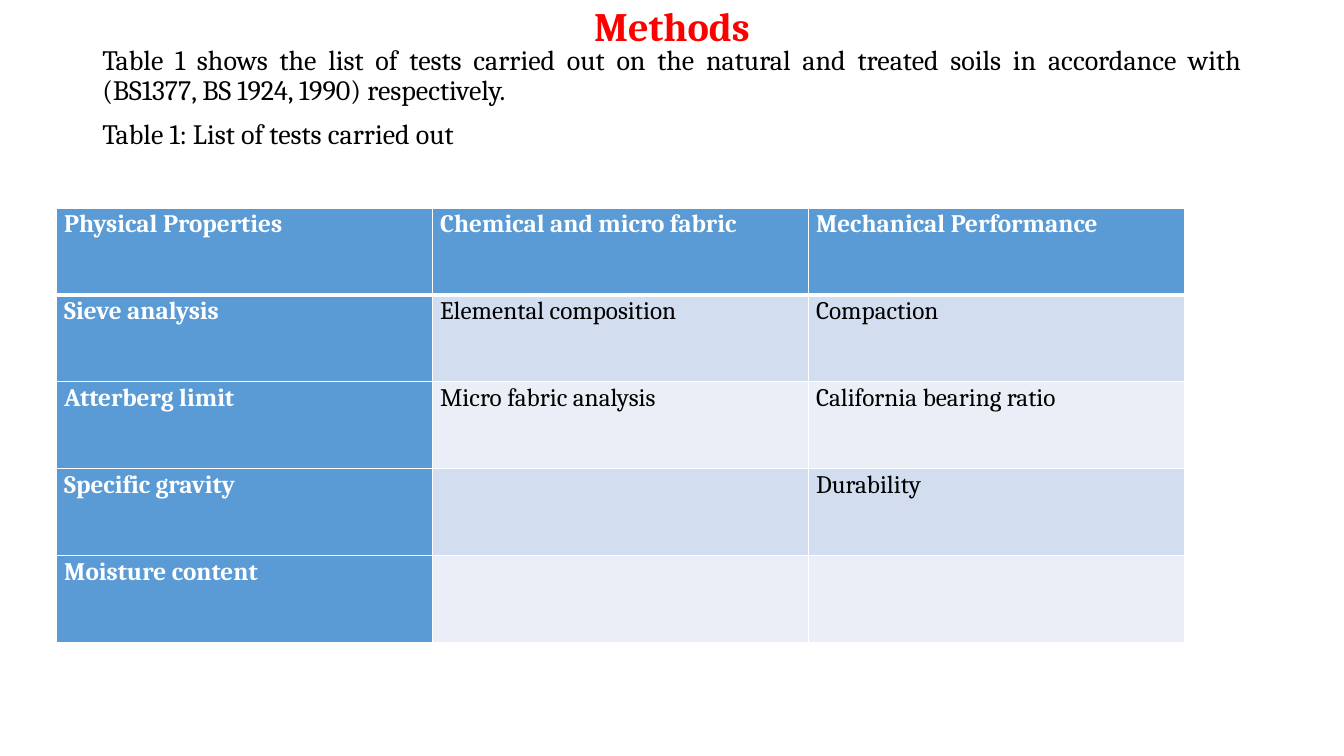
from lxml.etree import SubElement
from pptx import Presentation
from pptx.dml.color import RGBColor
from pptx.enum.text import MSO_ANCHOR as Anchor, PP_ALIGN as Align
from pptx.oxml.ns import qn
from pptx.util import Pt

FONT = "Cambria"
RED = RGBColor(0xFF, 0x00, 0x00)
BLACK = RGBColor(0x00, 0x00, 0x00)
WHITE = RGBColor(0xFF, 0xFF, 0xFF)
BLUE = RGBColor(0x5B, 0x9B, 0xD5)
BANDS = [RGBColor(0xD2, 0xDE, 0xEF), RGBColor(0xEA, 0xEF, 0xF7)]

INTRO = [
    "Table 1 shows the list of tests carried out on the natural and treated soils "
    "in accordance with (BS1377, BS 1924, 1990) respectively.",
    "Table 1: List of tests carried out",
]
TESTS = [
    ["Physical Properties", "Chemical and micro fabric", "Mechanical Performance"],
    ["Sieve analysis", "Elemental composition", "Compaction"],
    ["Atterberg limit", "Micro fabric analysis", "California bearing ratio"],
    ["Specific gravity", "", "Durability"],
    ["Moisture content", "", ""],
]


def style_paragraph(paragraph, size, color, bold, spacing):
    paragraph.line_spacing = spacing
    for target in [paragraph, *paragraph.runs]:
        target.font.name = FONT
        target.font.size = Pt(size)
        target.font.bold = bold
        target.font.color.rgb = color


def add_text_frame(slide, box):
    frame = slide.shapes.add_textbox(*map(Pt, box)).text_frame
    frame.word_wrap = True
    return frame


def add_heading(slide, box):
    heading = add_text_frame(slide, box)
    heading.vertical_anchor = Anchor.MIDDLE
    heading.text = "Methods"
    heading.paragraphs[0].alignment = Align.CENTER
    style_paragraph(heading.paragraphs[0], 28.8, RED, True, 0.9)


def add_intro(slide, box):
    intro = add_text_frame(slide, box)
    intro.text = "\n".join(INTRO)
    for paragraph in intro.paragraphs:
        paragraph.alignment = Align.JUSTIFY
        paragraph.space_before = Pt(10)
        style_paragraph(paragraph, 20, BLACK, False, 0.9)


def set_borders(cell, widths):
    """Draw white borders; widths are in points, by side."""
    properties = cell._tc.get_or_add_tcPr()
    for index, (side, width) in enumerate(widths.items()):
        line = SubElement(properties, qn(f"a:ln{side}"), w=str(Pt(width)))
        fill = SubElement(line, qn("a:solidFill"))
        SubElement(fill, qn("a:srgbClr"), val=str(WHITE))
        properties.insert(index, line)


def add_tests_table(slide, box):
    left, top, width, height = box
    rows, columns = len(TESTS), len(TESTS[0])
    table = slide.shapes.add_table(rows, columns, *map(Pt, box)).table
    table.first_col = True
    for column in table.columns:
        column.width = Pt(width / columns)
    for row in table.rows:
        row.height = Pt(height / rows)

    for r, tests in enumerate(TESTS):
        for c, test in enumerate(tests):
            cell = table.cell(r, c)
            is_header = r == 0 or c == 0
            cell.text = test
            cell.margin_left = cell.margin_right = Pt(5.4)
            cell.margin_top = cell.margin_bottom = 0
            style_paragraph(cell.text_frame.paragraphs[0], 18,
                            WHITE if is_header else BLACK, is_header, 1.07)
            cell.fill.solid()
            cell.fill.fore_color.rgb = BLUE if is_header else BANDS[(r - 1) % 2]
            # The rule below the header row is heavier
            set_borders(cell, {"L": 1, "R": 1, "T": 3 if r == 1 else 1,
                               "B": 3 if r == 0 else 1})


def main():
    presentation = Presentation()
    presentation.slide_width, presentation.slide_height = Pt(960), Pt(540)
    slide = presentation.slides.add_slide(presentation.slide_layouts[6])
    add_heading(slide, (66, 2, 828, 36))
    add_intro(slide, (66, 29.5, 828, 343))
    add_tests_table(slide, (40.5, 148.5, 805.5, 310.5))
    presentation.save("out.pptx")


if __name__ == "__main__":
    main()
